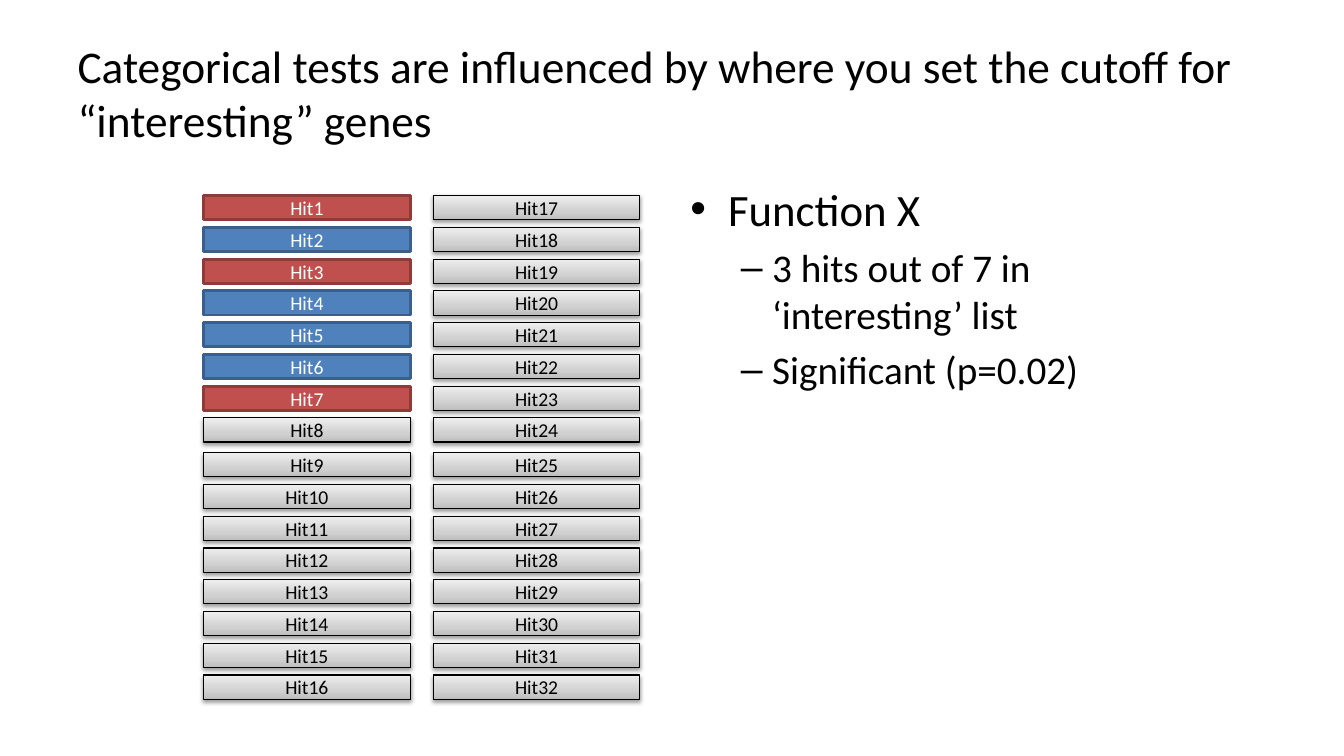
from lxml.etree import SubElement
from pptx import Presentation
from pptx.dml.color import RGBColor
from pptx.enum.shapes import MSO_SHAPE
from pptx.enum.text import MSO_ANCHOR, PP_ALIGN
from pptx.oxml import parse_xml
from pptx.oxml.ns import nsdecls, qn
from pptx.util import Cm, Pt

FONT = "Calibri"
HIT_COUNT, ROWS, BLOCK_ROWS = 32, 16, 8
FUNCTION_X_HITS = {1, 3, 7}
INTERESTING_HITS = 7
RED, RED_EDGE = "C0504D", "8E3B39"
BLUE, BLUE_EDGE = "4F81BD", "3A5F8C"
GREY_STOPS = [(0, "BDBDBD"), (35, "D1D1D1"), (100, "EEEEEE")]

# Text, size, left indent (cm), hanging indent (cm), bullet, level, space before
POINTS = [
    ("Function X", 32, 0.95, 0.95, "•", 0, 0),
    ("3 hits out of 7 in ‘interesting’ list", 28, 2.06, 0.79, "–", 1, 5.6),
    ("Significant (p=0.02)", 28, 2.06, 0.79, "–", 1, 5.6),
]


def color(value):
    return RGBColor.from_string(value)


def add_span(para, text, size, text_color="000000"):
    span = para.add_run()
    span.text = text
    span.font.name = FONT
    span.font.size = Pt(size)
    span.font.color.rgb = color(text_color)


def place(shape, left, top, width, height):
    shape.left, shape.top = Cm(left), Cm(top)
    shape.width, shape.height = Cm(width), Cm(height)


def add_title(page, text):
    title = page.shapes.title
    place(title, 1.7, 0.74, 30.48, 3.18)
    title.text_frame.vertical_anchor = MSO_ANCHOR.MIDDLE
    para = title.text_frame.paragraphs[0]
    para.alignment = PP_ALIGN.LEFT
    add_span(para, text, 32.4)


def add_points(page, points):
    box = page.shapes.add_textbox(Cm(17.15), Cm(4.45), Cm(11.23), Cm(12.57))
    frame = box.text_frame
    frame.word_wrap = True
    for index, (text, size, indent, hanging, bullet, level, gap) in enumerate(points):
        para = frame.add_paragraph() if index else frame.paragraphs[0]
        para.level = level
        para.space_before = Pt(gap)
        add_span(para, text, size)
        # Hanging indent and bullet
        properties = para._p.get_or_add_pPr()
        properties.set("marL", str(Cm(indent)))
        properties.set("indent", str(-Cm(hanging)))
        SubElement(properties, qn("a:buFont")).set("typeface", "Arial")
        SubElement(properties, qn("a:buChar")).set("char", bullet)


def fill_grey(box):
    """Vertical grey gradient with a soft shadow below."""
    stops = "".join(
        f'<a:gs pos="{position * 1000}"><a:srgbClr val="{value}"/></a:gs>'
        for position, value in GREY_STOPS
    )
    gradient = parse_xml(
        f'<a:gradFill {nsdecls("a")} rotWithShape="1"><a:gsLst>{stops}</a:gsLst>'
        '<a:lin ang="16200000" scaled="0"/></a:gradFill>'
    )
    shadow = parse_xml(
        f'<a:outerShdw {nsdecls("a")} blurRad="{Pt(3.1)}" dist="{Pt(1.6)}"'
        ' dir="5400000" rotWithShape="0"><a:srgbClr val="000000">'
        '<a:alpha val="38000"/></a:srgbClr></a:outerShdw>'
    )
    properties = box._element.spPr
    properties.find(qn("a:prstGeom")).addnext(gradient)
    properties.find(qn("a:effectLst")).append(shadow)


def add_hit(page, number):
    column, row = divmod(number - 1, ROWS)
    left = 5.13 + column * 5.79
    top = 4.93 + row * 0.8 + (row // BLOCK_ROWS) * 0.08
    box = page.shapes.add_shape(
        MSO_SHAPE.RECTANGLE, Cm(left), Cm(top), Cm(5.21), Cm(0.61)
    )
    box.shadow.inherit = False

    # Interesting genes are solid, the rest grey
    if number <= INTERESTING_HITS:
        in_function = number in FUNCTION_X_HITS
        fill, edge = (RED, RED_EDGE) if in_function else (BLUE, BLUE_EDGE)
        width, text_color = 2, "FFFFFF"
        box.fill.solid()
        box.fill.fore_color.rgb = color(fill)
    else:
        edge, width, text_color = "000000", 0.75, "000000"
        fill_grey(box)
    box.line.color.rgb = color(edge)
    box.line.width = Pt(width)

    box.text_frame.vertical_anchor = MSO_ANCHOR.MIDDLE
    para = box.text_frame.paragraphs[0]
    para.alignment = PP_ALIGN.CENTER
    add_span(para, f"Hit{number}", 14, text_color)


def main():
    deck = Presentation()
    deck.slide_width, deck.slide_height = Cm(33.87), Cm(19.05)
    page = deck.slides.add_slide(deck.slide_layouts[5])

    add_title(
        page,
        "Categorical tests are influenced by where you set the cutoff for "
        "“interesting” genes",
    )
    add_points(page, POINTS)
    for number in range(1, HIT_COUNT + 1):
        add_hit(page, number)

    deck.save("out.pptx")


if __name__ == "__main__":
    main()
